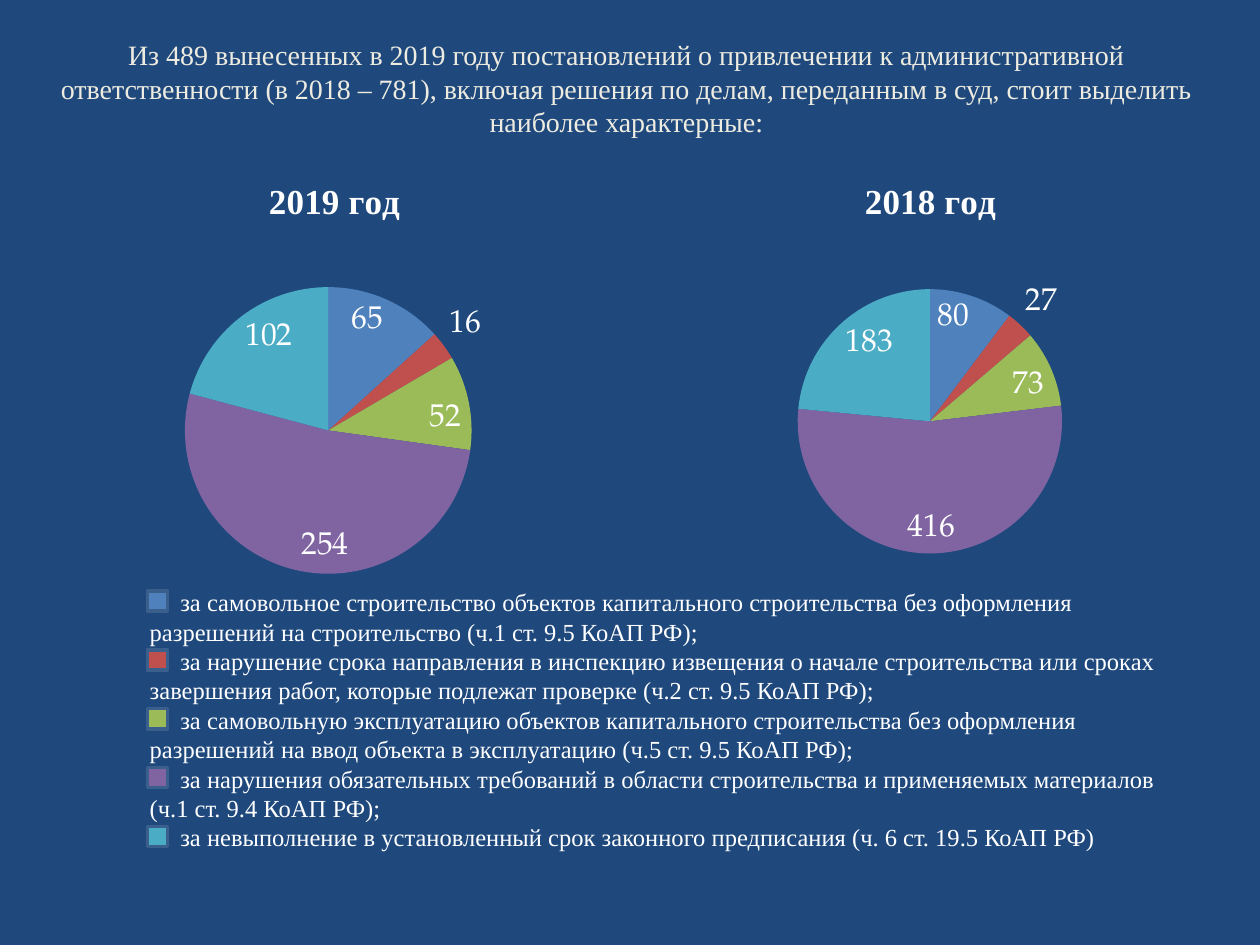
from pptx import Presentation
from pptx.chart.data import CategoryChartData
from pptx.dml.color import RGBColor
from pptx.enum.chart import XL_CHART_TYPE, XL_LABEL_POSITION
from pptx.enum.shapes import MSO_SHAPE
from pptx.enum.text import MSO_ANCHOR, PP_ALIGN
from pptx.oxml import parse_xml
from pptx.oxml.ns import nsdecls
from pptx.util import Pt

SERIF, CHART_FONT = "Times New Roman", "TeX Gyre Pagella"
COLORS = ["4F81BD", "C0504D", "9BBB59", "8064A2", "4BACC6"]


def rgb(value):
    return RGBColor.from_string(value)


def style(font, size, name=SERIF, color="FFFFFF", bold=False):
    font.size, font.name, font.bold = Pt(size), name, bold
    font.color.rgb = rgb(color)


prs = Presentation()
prs.slide_width, prs.slide_height = Pt(720), Pt(540)
s = prs.slides.add_slide(prs.slide_layouts[5])
s.background.fill.solid()
s.background.fill.fore_color.rgb = rgb("1F497D")

# Title
title = s.shapes.title
title.left, title.top, title.width, title.height = Pt(34), Pt(16.5), Pt(648), Pt(62.5)
tf = title.text_frame
tf.word_wrap = True
tf.vertical_anchor = MSO_ANCHOR.BOTTOM
tf.margin_left = tf.margin_right = tf.margin_bottom = 0
p = tf.paragraphs[0]
p.alignment = PP_ALIGN.CENTER
r = p.add_run()
r.text = ("Из 489 вынесенных в 2019 году постановлений о привлечении к административной "
          "ответственности (в 2018 – 781), включая решения по делам, переданным в суд, "
          "стоит выделить наиболее характерные:")
style(r.font, 16, color="EEECE1")

# Pie charts: name, values, frame (left, top, width, height), pie (left, top, diameter)
pies = [
    ("2019 год", (65, 16, 52, 254, 102), (34, 90, 314.5, 247.5), (105.7, 164, 164)),
    ("2018 год", (80, 27, 73, 416, 183), (360, 90, 343.5, 236), (455.7, 165.2, 151)),
]
for name, values, frame, (pie_left, pie_top, diameter) in pies:
    data = CategoryChartData()
    data.categories = ["1", "2", "3", "4", "5"]
    data.add_series(name, values)
    chart = s.shapes.add_chart(XL_CHART_TYPE.PIE, *map(Pt, frame), data).chart
    style(chart.font, 18, CHART_FONT)
    chart.has_legend = False
    chart.has_title = True
    r = chart.chart_title.text_frame.paragraphs[0].add_run()
    r.text = name
    style(r.font, 20, bold=True)

    plot = chart.plots[0]
    plot.vary_by_categories = True
    plot.has_data_labels = True
    labels = plot.data_labels
    labels.show_value = True
    labels.show_percentage = False
    labels.position = XL_LABEL_POSITION.INSIDE_END
    style(labels.font, 18, CHART_FONT)
    points = plot.series[0].points
    for i, color in enumerate(COLORS):
        fill = points[i].format.fill
        fill.solid()
        fill.fore_color.rgb = rgb(color)
        label = points[i].data_label
        style(label.font, 18, CHART_FONT)
        # The narrow second slice has its label outside
        label.position = XL_LABEL_POSITION.OUTSIDE_END if i == 1 else XL_LABEL_POSITION.INSIDE_END

    left, top, width, height = frame
    place = {"x": (pie_left - left) / width, "y": (pie_top - top) / height,
             "w": diameter / width, "h": diameter / height}
    area = chart._chartSpace.chart.plotArea
    for old in area.findall("{*}layout"):
        area.remove(old)
    area.insert(0, parse_xml(
        f'<c:layout {nsdecls("c")}><c:manualLayout><c:layoutTarget val="inner"/>'
        '<c:xMode val="edge"/><c:yMode val="edge"/>'
        + "".join(f'<c:{k} val="{v:.3f}"/>' for k, v in place.items())
        + "</c:manualLayout></c:layout>"))

# Shared legend
offences = [
    "за самовольное строительство объектов капитального строительства без оформления "
    "разрешений на строительство (ч.1 ст. 9.5 КоАП РФ);",
    "за нарушение срока направления в инспекцию извещения о начале строительства или сроках "
    "завершения работ, которые подлежат проверке (ч.2 ст. 9.5 КоАП РФ);",
    "за самовольную эксплуатацию объектов капитального строительства без оформления "
    "разрешений на ввод объекта в эксплуатацию (ч.5 ст. 9.5 КоАП РФ);",
    "за нарушения обязательных требований в области строительства и применяемых материалов "
    "(ч.1 ст. 9.4 КоАП РФ);",
    "за невыполнение в установленный срок законного предписания (ч. 6 ст. 19.5 КоАП РФ)",
]
tf = s.shapes.add_textbox(Pt(78.5), Pt(332), Pt(596), Pt(160)).text_frame
tf.word_wrap = True
for i, (offence, color) in enumerate(zip(offences, COLORS)):
    p = tf.paragraphs[0] if i == 0 else tf.add_paragraph()
    p._p.get_or_add_pPr().set("indent", str(Pt(17.5)))
    p.line_spacing = Pt(16.8)
    r = p.add_run()
    r.text = offence
    style(r.font, 14)

    sp = s.shapes.add_shape(MSO_SHAPE.RECTANGLE, Pt(84.2), Pt(337.7 + 33.65 * i), Pt(11.5), Pt(11.5))
    sp.shadow.inherit = False
    sp.fill.solid()
    sp.fill.fore_color.rgb = rgb(color)
    sp.line.color.rgb = rgb("3A5F8C")
    sp.line.width = Pt(2)

prs.save("out.pptx")
